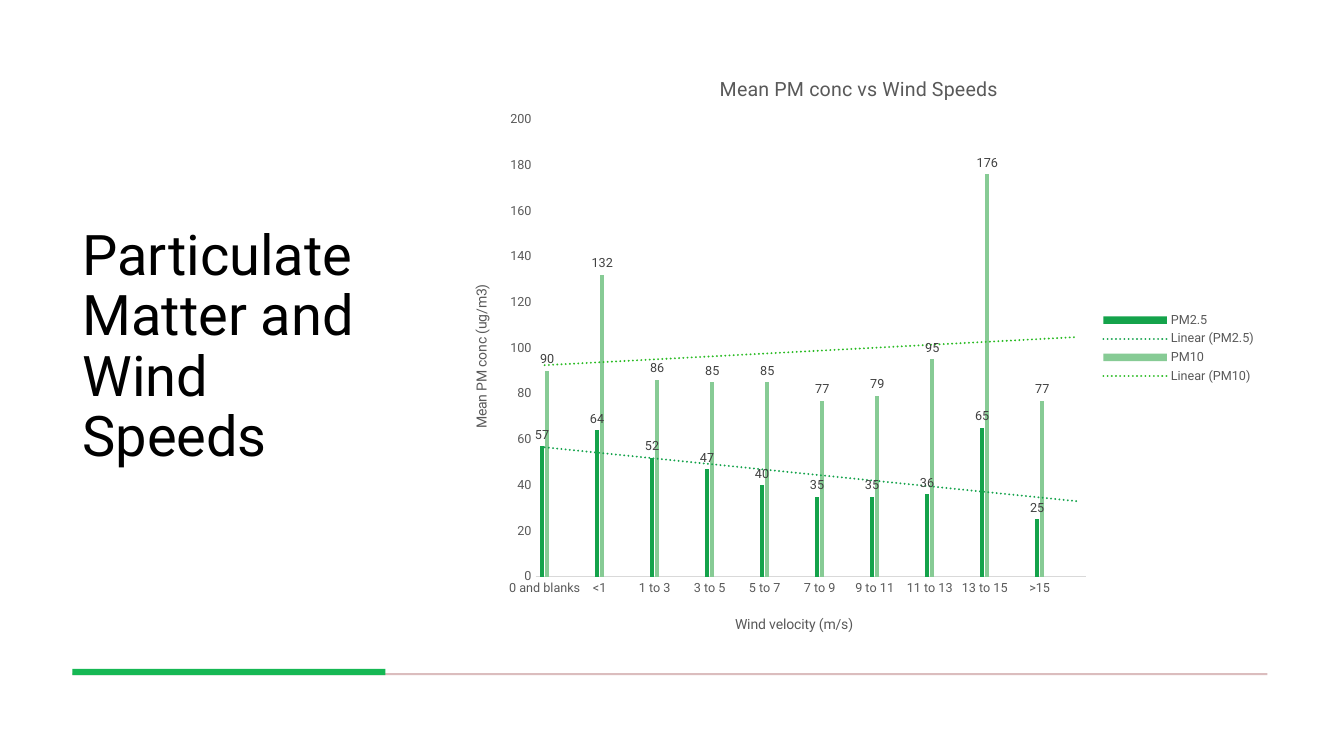
from lxml import etree
from pptx import Presentation
from pptx.chart.data import CategoryChartData
from pptx.dml.color import RGBColor
from pptx.enum.chart import XL_CHART_TYPE, XL_LABEL_POSITION, XL_LEGEND_POSITION, XL_TICK_MARK
from pptx.enum.shapes import MSO_SHAPE
from pptx.enum.text import MSO_ANCHOR, MSO_AUTO_SIZE, PP_ALIGN
from pptx.oxml import parse_xml
from pptx.oxml.ns import nsdecls, qn
from pptx.util import Pt

PX = 9525
FONT = "Roboto"
GREY = "595959"
RECT = MSO_SHAPE.RECTANGLE
BARS = XL_CHART_TYPE.COLUMN_CLUSTERED
ABOVE = XL_LABEL_POSITION.OUTSIDE_END
RIGHT = XL_LEGEND_POSITION.RIGHT
NO_TICK = XL_TICK_MARK.NONE
MIDDLE = MSO_ANCHOR.MIDDLE
NO_FIT = MSO_AUTO_SIZE.NONE
LEFT = PP_ALIGN.LEFT

STEP = 3
SPEEDS = ["0 and blanks", "<1", "1 to 3", "3 to 5", "5 to 7", "7 to 9",
          "9 to 11", "11 to 13", "13 to 15", ">15"]
SERIES = [
    ("PM2.5", "14A34B", "14A34B", [57, 64, 52, 47, 40, 35, 35, 36, 65, 25]),
    ("PM10", "87CB95", "29BB23", [90, 132, 86, 85, 85, 77, 79, 95, 176, 77]),
]


def rgb(code):
    """Turn a hex string into a colour."""
    return RGBColor.from_string(code)


def style(font, size, color):
    """Set face, size and colour of a font."""
    font.name, font.size, font.bold = FONT, Pt(size), False
    font.color.rgb = rgb(color)


def spread(items, blank):
    """Put each item first in a group of STEP slots."""
    return [slot for item in items for slot in [item] + [blank] * (STEP - 1)]


def add_bar(slide, box, color):
    """Draw a plain filled bar."""
    bar = slide.shapes.add_shape(RECT, *[n * PX for n in box])
    bar.shadow.inherit = False
    bar.fill.solid()
    bar.fill.fore_color.rgb = rgb(color)
    bar.line.fill.background()


def add_title(slide, box, text):
    """Place and format the slide title."""
    title = slide.shapes.title
    title.left, title.top, title.width, title.height = [n * PX for n in box]
    frame = title.text_frame
    frame.word_wrap, frame.auto_size = True, NO_FIT
    frame.vertical_anchor = MIDDLE
    par = frame.paragraphs[0]
    par.alignment, par.line_spacing = LEFT, 0.9
    run = par.add_run()
    run.text = text
    style(run.font, 40, "000000")


def add_rule(slide, box, part):
    """Draw the thin foot line with a thick accent at its left."""
    left, top, width, height = box
    add_bar(slide, (left, top + 4, width, 2), "DBBDBE")
    add_bar(slide, (left, top, part, height), "16B854")


def set_place(node, **spots):
    """Give a chart part a manual layout in fractions of the chart."""
    for old in node.findall(qn("c:layout")):
        node.remove(old)
    tags = "".join(f'<c:{k} val="{v}"/>' for k, v in spots.items())
    layout = parse_xml(f'<c:layout {nsdecls("c")}><c:manualLayout>{tags}'
                       '</c:manualLayout></c:layout>')
    text = node.find(qn("c:tx"))
    node.insert(0 if text is None else node.index(text) + 1, layout)


def add_head(owner, text, size, x, y):
    """Title a chart or an axis at the given spot."""
    head = owner.chart_title if hasattr(owner, "chart_title") else owner.axis_title
    run = head.text_frame.paragraphs[0].add_run()
    run.text = text
    style(run.font, size, GREY)
    node = head._element
    set_place(node, xMode="edge", yMode="edge", x=x, y=y)
    for old in node.findall(qn("c:overlay")):
        node.remove(old)
    lay = node.find(qn("c:layout"))
    flag = etree.Element(qn("c:overlay"), val="0")
    lay.addnext(flag)


def add_trend(series, color):
    """Add a dotted linear trend line to a series."""
    trend = parse_xml(
        f'<c:trendline {nsdecls("c", "a")}><c:spPr><a:ln w="{Pt(1.5)}" cap="rnd">'
        f'<a:solidFill><a:srgbClr val="{color}"/></a:solidFill>'
        '<a:prstDash val="sysDot"/></a:ln></c:spPr>'
        '<c:trendlineType val="linear"/><c:dispRSqr val="0"/>'
        '<c:dispEq val="0"/></c:trendline>')
    series._element.find(qn("c:cat")).addprevious(trend)


def set_axes(chart):
    """Format both axes."""
    speed, level = chart.category_axis, chart.value_axis
    for axis in (speed, level):
        axis.has_major_gridlines = False
        axis.major_tick_mark = axis.minor_tick_mark = NO_TICK
        style(axis.tick_labels.font, 9, GREY)
    speed.format.line.color.rgb = rgb("D9D9D9")
    speed.format.line.width = Pt(0.75)
    level.format.line.fill.background()
    level.minimum_scale, level.maximum_scale, level.major_unit = 0, 200, 20
    add_head(speed, "Wind velocity (m/s)", 10, 0.35, 0.94)
    add_head(level, "Mean PM conc (ug/m3)", 10, 0.03, 0.39)


def add_graph(slide, box):
    """Place the column chart with its trend lines."""
    data = CategoryChartData()
    data.categories = spread(SPEEDS, "")
    for name, _, _, vals in SERIES:
        data.add_series(name, spread(vals, None))
    chart = slide.shapes.add_chart(BARS, *[n * PX for n in box], data).chart
    style(chart.font, 10, "000000")
    chart.has_title = True
    add_head(chart, "Mean PM conc vs Wind Speeds", 14, 0.33, 0.04)
    chart.has_legend = True
    chart.legend.position, chart.legend.include_in_layout = RIGHT, False
    style(chart.legend.font, 9, GREY)
    set_axes(chart)
    plot = chart.plots[0]
    plot.gap_width, plot.overlap, plot.vary_by_categories = 219, -27, False
    for series, (_, color, dots, _) in zip(plot.series, SERIES):
        series.format.fill.solid()
        series.format.fill.fore_color.rgb = rgb(color)
        labels = series.data_labels
        labels.show_value, labels.position = True, ABOVE
        style(labels.font, 9, "404040")
        add_trend(series, dots)
    area = chart._chartSpace.chart.plotArea
    set_place(area, layoutTarget="inner", xMode="edge", yMode="edge",
              x=0.11, y=0.12, w=0.67, h=0.76)


def main():
    """Build the slide and save it."""
    deck = Presentation()
    deck.slide_width, deck.slide_height = 1280 * PX, 720 * PX
    slide = deck.slides.add_slide(deck.slide_layouts[5])
    add_title(slide, (69, 45, 298, 573), "Particulate Matter and Wind Speeds")
    add_rule(slide, (69, 637, 1138, 6), 298)
    add_graph(slide, (424, 45, 782, 573))
    deck.save("out.pptx")


if __name__ == "__main__":
    main()
